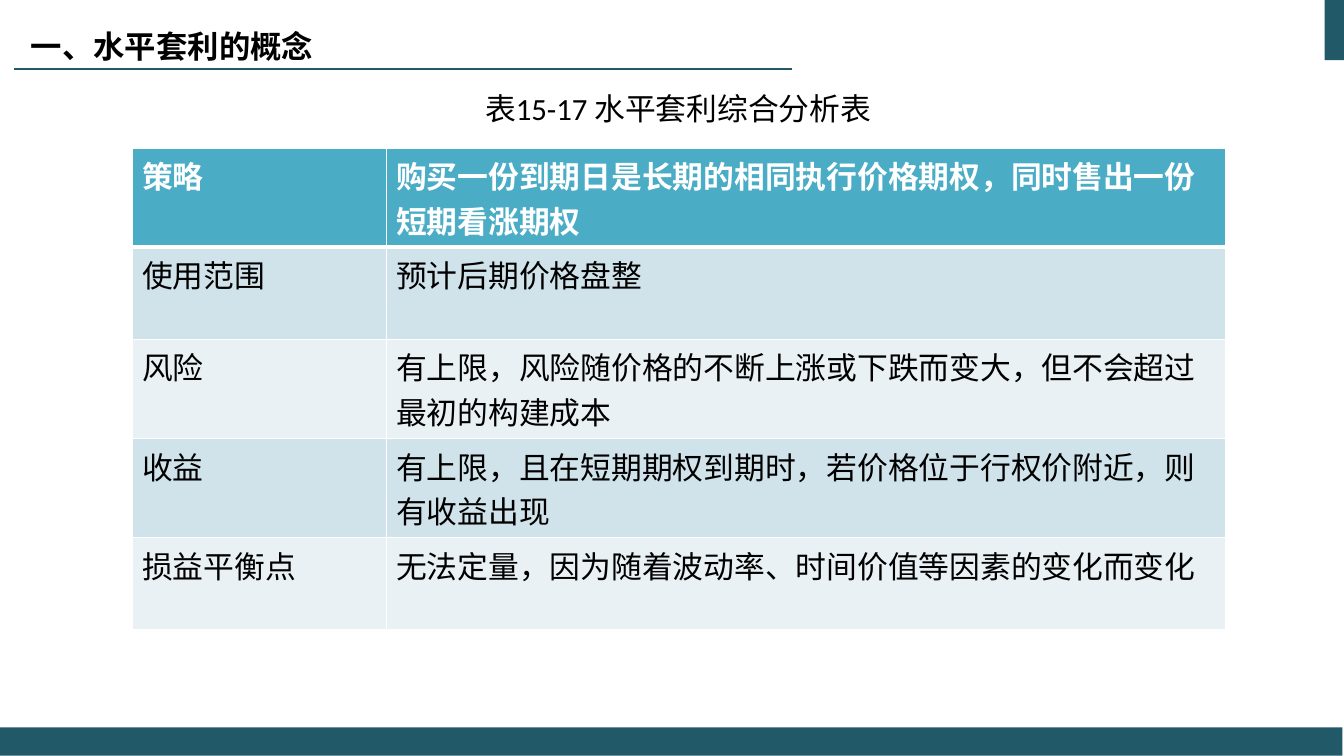
from dataclasses import dataclass

from lxml.etree import SubElement
from pptx import Presentation
from pptx.dml.color import RGBColor
from pptx.enum.shapes import MSO_CONNECTOR, MSO_SHAPE
from pptx.enum.text import MSO_ANCHOR, PP_ALIGN
from pptx.oxml import parse_xml
from pptx.oxml.ns import nsdecls, qn
from pptx.util import Cm, Pt


@dataclass(frozen=True)
class Theme:
    accent: str = "215968"
    header: str = "4BACC6"
    bands: tuple = ("D0E3EA", "E9F1F5")
    text: str = "000000"
    white: str = "FFFFFF"
    cjk: str = "Noto Sans CJK SC"
    title: int = 28
    body: int = 22


theme = Theme()


def style_run(r, font, size, color, bold=False):
    r.font.name = font
    r.font.size = Pt(size)
    r.font.bold = bold
    r.font.color.rgb = RGBColor.from_string(color)
    SubElement(r.font._element, qn("a:ea")).set("typeface", theme.cjk)


def add_text(s, box, text, font, size, bold=False):
    tf = s.shapes.add_textbox(*map(Cm, box)).text_frame
    tf.word_wrap = True
    tf.text = text
    style_run(tf.paragraphs[0].runs[0], font, size, theme.text, bold)
    return tf


prs = Presentation()
prs.slide_width, prs.slide_height = Cm(33.87), Cm(19.05)
s = prs.slides.add_slide(prs.slide_layouts[6])

for box in [(33.38, 0, 0.5, 1.52), (0, 18.33, 33.83, 0.71)]:
    sp = s.shapes.add_shape(MSO_SHAPE.RECTANGLE, *map(Cm, box))
    sp.shadow.inherit = False
    sp.fill.solid()
    sp.fill.fore_color.rgb = RGBColor.from_string(theme.accent)
    sp.line.fill.background()

rule = s.shapes.add_connector(MSO_CONNECTOR.STRAIGHT, Cm(19.96), Cm(1.73), Cm(0.36), Cm(1.73))
rule.line.color.rgb = RGBColor.from_string(theme.accent)
rule.line.width = Pt(1.5)
SubElement(rule._element.spPr, qn("a:effectLst"))

title = add_text(s, (0.53, -0.1, 27.64, 2.36), "一、水平套利的概念", theme.cjk, theme.title, True)
title.vertical_anchor = MSO_ANCHOR.MIDDLE
title.paragraphs[0].runs[0].font._element.set("cap", "small")

caption = add_text(s, (1.75, 2.13, 30.68, 4.34), "表15-17 水平套利综合分析表", "Calibri", theme.body)
caption.paragraphs[0].alignment = PP_ALIGN.CENTER

one_line, two_lines = 2.32, 2.5
rows = [
    (two_lines, "策略", "购买一份到期日是长期的相同执行价格期权，同时售出一份短期看涨期权"),
    (one_line, "使用范围", "预计后期价格盘整"),
    (two_lines, "风险", "有上限，风险随价格的不断上涨或下跌而变大，但不会超过最初的构建成本"),
    (two_lines, "收益", "有上限，且在短期期权到期时，若价格位于行权价附近，则有收益出现"),
    (one_line, "损益平衡点", "无法定量，因为随着波动率、时间价值等因素的变化而变化"),
]
table_height = sum(height for height, *_ in rows)
table = s.shapes.add_table(len(rows), 2, Cm(3.33), Cm(3.73), Cm(27.56), Cm(table_height)).table
for column, width in zip(table.columns, (6.4, 21.16)):
    column.width = Cm(width)

for i, (height, *texts) in enumerate(rows):
    is_header = i == 0
    table.rows[i].height = Cm(height)
    fill = theme.header if is_header else theme.bands[(i - 1) % 2]
    color = theme.white if is_header else theme.text
    borders = {"lnL": 1, "lnR": 1, "lnT": 3 if i == 1 else 1, "lnB": 3 if is_header else 1}
    for j, text in enumerate(texts):
        cell = table.cell(i, j)
        cell.text = text
        style_run(cell.text_frame.paragraphs[0].runs[0], "Arial", theme.body, color, is_header)
        cell.fill.solid()
        cell.fill.fore_color.rgb = RGBColor.from_string(fill)
        tcPr = cell._tc.get_or_add_tcPr()
        for k, (side, width) in enumerate(borders.items()):
            tcPr.insert(k, parse_xml(
                f'<a:{side} {nsdecls("a")} w="{Pt(width)}"><a:solidFill>'
                f'<a:srgbClr val="{theme.white}"/></a:solidFill></a:{side}>'))

prs.save("out.pptx")
